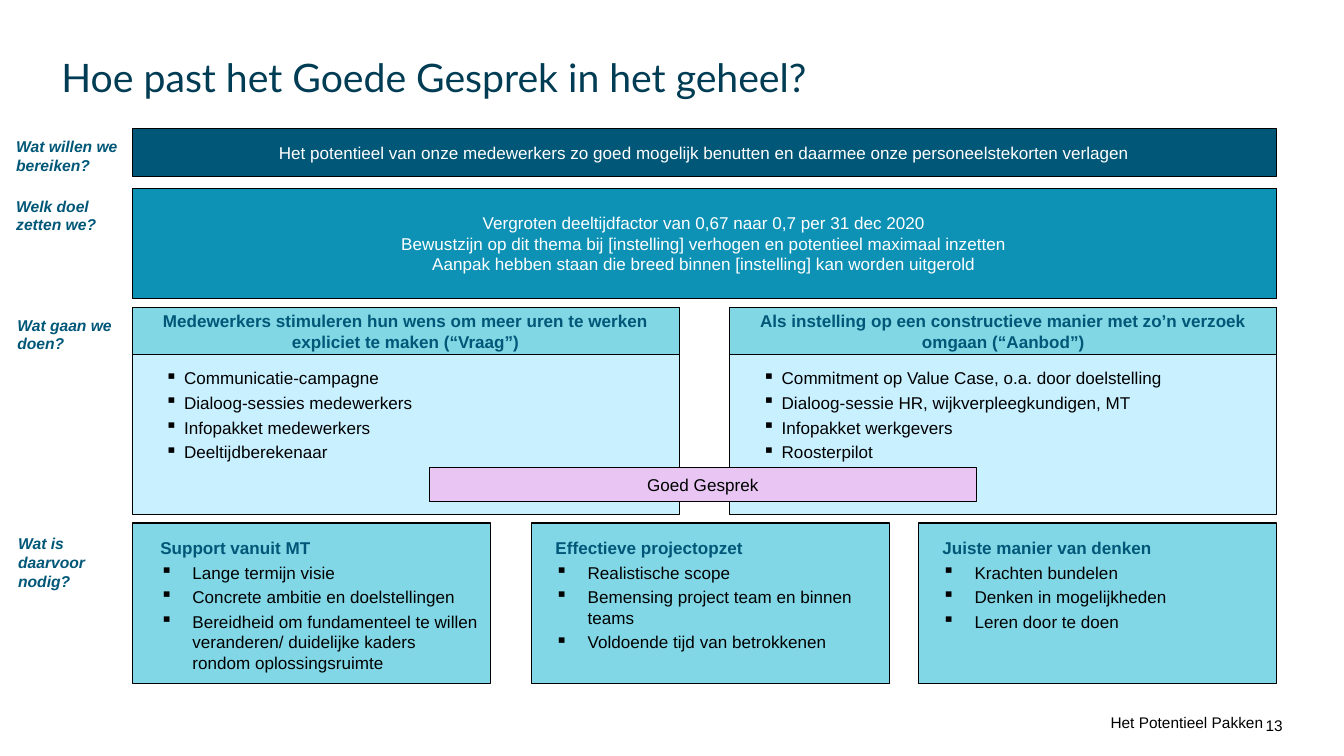
"""Build the slide on how the Goede Gesprek fits into the whole."""
import pptx
import pptx.dml.color
import pptx.enum.shapes
import pptx.enum.text
import pptx.oxml
import pptx.oxml.ns
import pptx.util

Cm = pptx.util.Cm
Pt = pptx.util.Pt
ALIGN = pptx.enum.text.PP_ALIGN
ANCHOR = pptx.enum.text.MSO_ANCHOR

COLOURS = {
    "black": "000000", "white": "FFFFFF", "title": "003C54", "navy": "005777",
    "blue": "0D92B6", "header": "82D7E4", "card": "82D7E6", "pale": "C9F0FF",
    "lilac": "E8C5F3",
}
LEFT = 3.33
BODY_SIZE = 12.2
TEXT_INSETS = (0.41, 0.2, 0.2, 0.2)
NO_INSETS = (0, 0, 0, 0)


class SlideBuilder:
    def __init__(self, page, font="Arial"):
        self.page = page
        self.font = font

    def colour(self, name):
        return pptx.dml.color.RGBColor.from_string(COLOURS[name])

    def add_span(self, para, text, size, colour, bold=False, italic=False, font=None):
        span = para.add_run()
        span.text = text
        span.font.name = font or self.font
        span.font.size = Pt(size)
        span.font.bold = bold
        span.font.italic = italic
        span.font.color.rgb = self.colour(colour)

    def bullet(self, para, indent):
        properties = para._p.get_or_add_pPr()
        properties.set("marL", str(Cm(indent)))
        properties.set("indent", str(-Cm(indent)))
        mark = pptx.oxml.parse_xml(
            f'<a:buChar {pptx.oxml.ns.nsdecls("a")} char="▪"/>')
        properties.append(mark)

    def block(self, left, top, width, height, fill, lines=(), colour="black", bold=False):
        box = self.page.shapes.add_shape(
            pptx.enum.shapes.MSO_SHAPE.RECTANGLE, Cm(left), Cm(top), Cm(width), Cm(height))
        box.shadow.inherit = False
        box.fill.solid()
        box.fill.fore_color.rgb = self.colour(fill)
        box.line.color.rgb = self.colour("black")
        box.line.width = Pt(0.75)
        frame = box.text_frame
        frame.vertical_anchor = ANCHOR.MIDDLE
        for index, line in enumerate(lines):
            para = frame.add_paragraph() if index else frame.paragraphs[0]
            para.alignment = ALIGN.CENTER
            self.add_span(para, line, BODY_SIZE, colour, bold)

    def text_box(self, left, top, width, height, insets=TEXT_INSETS,
                 anchor=ANCHOR.TOP, wrap=True):
        box = self.page.shapes.add_textbox(Cm(left), Cm(top), Cm(width), Cm(height))
        frame = box.text_frame
        frame.word_wrap = wrap
        frame.vertical_anchor = anchor
        (frame.margin_left, frame.margin_top,
         frame.margin_right, frame.margin_bottom) = map(Cm, insets)
        return frame

    def label(self, left, top, width, text):
        frame = self.text_box(left, top, width, 1.47)
        self.add_span(frame.paragraphs[0], text, 11.2, "navy", bold=True, italic=True)

    def bullets(self, left, top, width, items, indent, heading=None):
        frame = self.text_box(left, top, width, 1.19)
        para = frame.paragraphs[0]
        if heading:
            self.add_span(para, heading, BODY_SIZE, "navy", bold=True)
        for index, item in enumerate(items):
            if index or heading:
                para = frame.add_paragraph()
                para.space_before = Pt(3)
            self.bullet(para, indent)
            self.add_span(para, item, BODY_SIZE, "black")

    def title(self, text):
        frame = self.text_box(1.55, 1.32, 30.78, 1.22, NO_INSETS, ANCHOR.MIDDLE)
        self.add_span(frame.paragraphs[0], text, 28, "title", font="Lato")

    def footer(self, left, top, width, text, align, anchor):
        frame = self.text_box(left, top, width, 0.48, NO_INSETS, anchor, wrap=False)
        frame.paragraphs[0].alignment = align
        self.add_span(frame.paragraphs[0], text, 11, "black")


def main():
    deck = pptx.Presentation()
    deck.slide_width, deck.slide_height = Cm(33.87), Cm(19.05)
    slide = SlideBuilder(deck.slides.add_slide(deck.slide_layouts[6]))

    slide.title("Hoe past het Goede Gesprek in het geheel?")
    for left, top, width, text in (
        (0, 3.25, 3.48, "Wat willen we bereiken?"),
        (0, 4.75, 3.48, "Welk doel zetten we?"),
        (0.03, 7.75, 3.35, "Wat gaan we doen?"),
        (0.05, 13.26, 3.3, "Wat is daarvoor nodig?"),
    ):
        slide.label(left, top, width, text)

    slide.block(LEFT, 3.25, 28.85, 1.19, "navy", [
        "Het potentieel van onze medewerkers zo goed mogelijk benutten "
        "en daarmee onze personeelstekorten verlagen"], "white")
    slide.block(LEFT, 4.75, 28.83, 2.77, "blue", [
        "Vergroten deeltijdfactor van 0,67 naar 0,7 per 31 dec 2020",
        "Bewustzijn op dit thema bij [instelling] verhogen en potentieel maximaal inzetten",
        "Aanpak hebben staan die breed binnen [instelling] kan worden uitgerold"], "white")

    for left, width, heading, items in (
        (LEFT, 12.01,
         "Medewerkers stimuleren hun wens om meer uren te werken expliciet te maken (“Vraag”)",
         ["Communicatie-campagne", "Dialoog-sessies medewerkers",
          "Infopakket medewerkers", "Deeltijdberekenaar"]),
        (18.39, 12.57,
         "Als instelling op een constructieve manier met zo’n verzoek omgaan (“Aanbod”)",
         ["Commitment op Value Case, o.a. door doelstelling",
          "Dialoog-sessie HR, wijkverpleegkundigen, MT",
          "Infopakket werkgevers", "Roosterpilot"]),
    ):
        slide.block(left, 7.75, 13.79, 5.21, "pale")
        slide.block(left, 7.75, 13.79, 1.19, "header", [heading], "navy", bold=True)
        slide.bullets(left + 0.42, 9.07, width, items, 0.48)
    slide.block(10.82, 11.79, 13.79, 0.84, "lilac", ["Goed Gesprek"])

    for left, offset, width, heading, items in (
        (LEFT, 0.3, 8.64, "Support vanuit MT",
         ["Lange termijn visie", "Concrete ambitie en doelstellingen",
          "Bereidheid om fundamenteel te willen veranderen/ duidelijke kaders "
          "rondom oplossingsruimte"]),
        (13.39, 0.2, 8.38, "Effectieve projectopzet",
         ["Realistische scope", "Bemensing project team en binnen teams",
          "Voldoende tijd van betrokkenen"]),
        (23.14, 0.2, 8.38, "Juiste manier van denken",
         ["Krachten bundelen", "Denken in mogelijkheden", "Leren door te doen"]),
    ):
        slide.block(left, 13.18, 9.04, 4.04, "card")
        slide.bullets(left + offset, 13.34, width, items, 0.81, heading)

    slide.footer(27.97, 17.96, 3.89, "Het Potentieel Pakken", ALIGN.CENTER, ANCHOR.BOTTOM)
    slide.footer(31.62, 18.03, 0.71, "13", ALIGN.RIGHT, ANCHOR.MIDDLE)
    deck.save("out.pptx")


if __name__ == "__main__":
    main()
